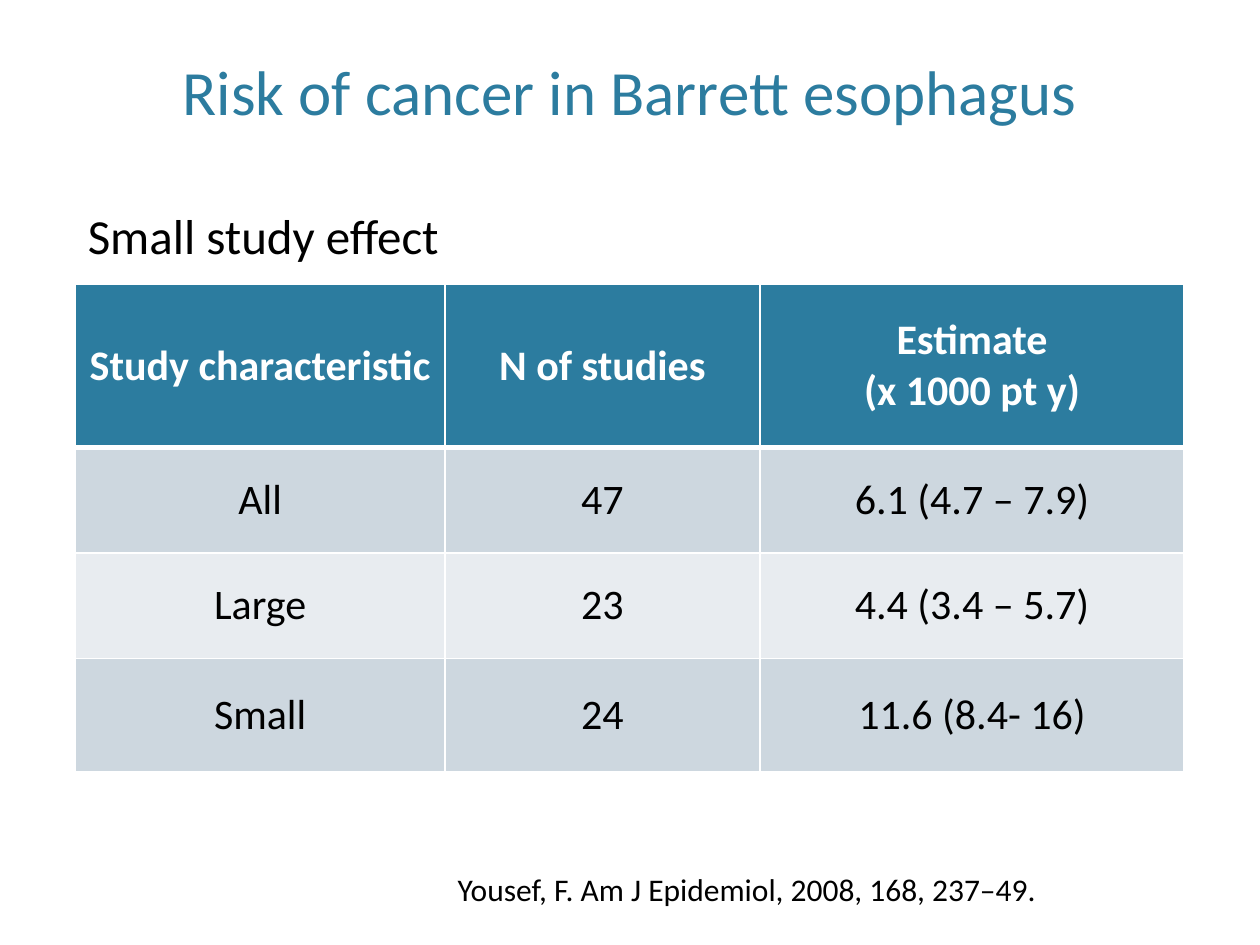
import pptx
import pptx.dml.color
import pptx.enum.text
import pptx.oxml
import pptx.oxml.ns
import pptx.util

Cm = pptx.util.Cm
Pt = pptx.util.Pt
RGBColor = pptx.dml.color.RGBColor
ALIGN = pptx.enum.text.PP_ALIGN
ANCHOR = pptx.enum.text.MSO_ANCHOR

TEAL = RGBColor(0x2C, 0x7C, 0x9F)
BAND_DARK = RGBColor(0xCD, 0xD7, 0xDF)
BAND_LIGHT = RGBColor(0xE8, 0xEC, 0xF0)
WHITE = RGBColor(0xFF, 0xFF, 0xFF)
BLACK = RGBColor(0, 0, 0)
FONT = "Calibri"

TITLE = "Risk of cancer in Barrett esophagus"
SUBTITLE = "Small study effect"
CITATION = "Yousef, F. Am J Epidemiol, 2008, 168, 237–49."
STUDIES = [
    ("Study characteristic", "N of studies", "Estimate\n(x 1000 pt y)"),
    ("All", "47", "6.1 (4.7 – 7.9)"),
    ("Large", "23", "4.4 (3.4 – 5.7)"),
    ("Small", "24", "11.6 (8.4- 16)"),
]
COLUMN_WIDTHS = (7.45, 6.35, 8.55)
ROW_HEIGHTS = (3.28, 2.13, 2.12, 2.29)
LEFT, TABLE_TOP = 1.52, 5.74


def style_paragraphs(text_frame, size, color, align, bold=False):
    for paragraph in text_frame.paragraphs:
        paragraph.alignment = align
        paragraph.font.name = FONT
        paragraph.font.size = Pt(size)
        paragraph.font.color.rgb = color
        paragraph.font.bold = bold


def add_text(slide, text, box, size, color, align, anchor=ANCHOR.TOP, wrap=True):
    text_frame = slide.shapes.add_textbox(*map(Cm, box)).text_frame
    text_frame.text = text
    text_frame.word_wrap = wrap
    text_frame.vertical_anchor = anchor
    style_paragraphs(text_frame, size, color, align)


def set_borders(cell, color, widths):
    """Draw the left, right, top and bottom borders, with widths in points."""
    properties = cell._tc.get_or_add_tcPr()
    for index, (side, width) in enumerate(zip("LRTB", widths)):
        line = pptx.oxml.parse_xml(
            f'<a:ln{side} {pptx.oxml.ns.nsdecls("a")} w="{Pt(width)}">'
            f'<a:solidFill><a:srgbClr val="{color}"/></a:solidFill></a:ln{side}>')
        properties.insert(index, line)


def add_study_table(slide):
    table = slide.shapes.add_table(
        len(STUDIES), len(COLUMN_WIDTHS), Cm(LEFT), Cm(TABLE_TOP),
        Cm(sum(COLUMN_WIDTHS)), Cm(sum(ROW_HEIGHTS))).table
    for column, width in zip(table.columns, COLUMN_WIDTHS):
        column.width = Cm(width)
    for row, height in zip(table.rows, ROW_HEIGHTS):
        row.height = Cm(height)

    for row_index, texts in enumerate(STUDIES):
        header = row_index == 0
        band = BAND_DARK if row_index % 2 else BAND_LIGHT
        top = 3 if row_index == 1 else 1
        bottom = 3 if header else 1
        for column_index, text in enumerate(texts):
            cell = table.cell(row_index, column_index)
            cell.text = text
            cell.vertical_anchor = ANCHOR.MIDDLE
            cell.fill.solid()
            cell.fill.fore_color.rgb = TEAL if header else band
            set_borders(cell, WHITE, (1, 1, top, bottom))
            style_paragraphs(cell.text_frame, 24, WHITE if header else BLACK,
                             ALIGN.CENTER, header)


def main():
    presentation = pptx.Presentation()
    presentation.slide_width = Cm(25.4)
    presentation.slide_height = Cm(19.05)
    slide = presentation.slides.add_slide(presentation.slide_layouts[6])

    add_text(slide, TITLE, (LEFT, 0.3, 22.35, 2.41), 36, TEAL,
             ALIGN.CENTER, ANCHOR.BOTTOM)
    add_study_table(slide)
    add_text(slide, CITATION, (3.89, 17.42, 17.25, 1.02), 18, BLACK, ALIGN.RIGHT)
    add_text(slide, SUBTITLE, (LEFT, 4.01, 9.02, 1.45), 28, BLACK,
             ALIGN.LEFT, wrap=False)
    presentation.save("out.pptx")


if __name__ == "__main__":
    main()
